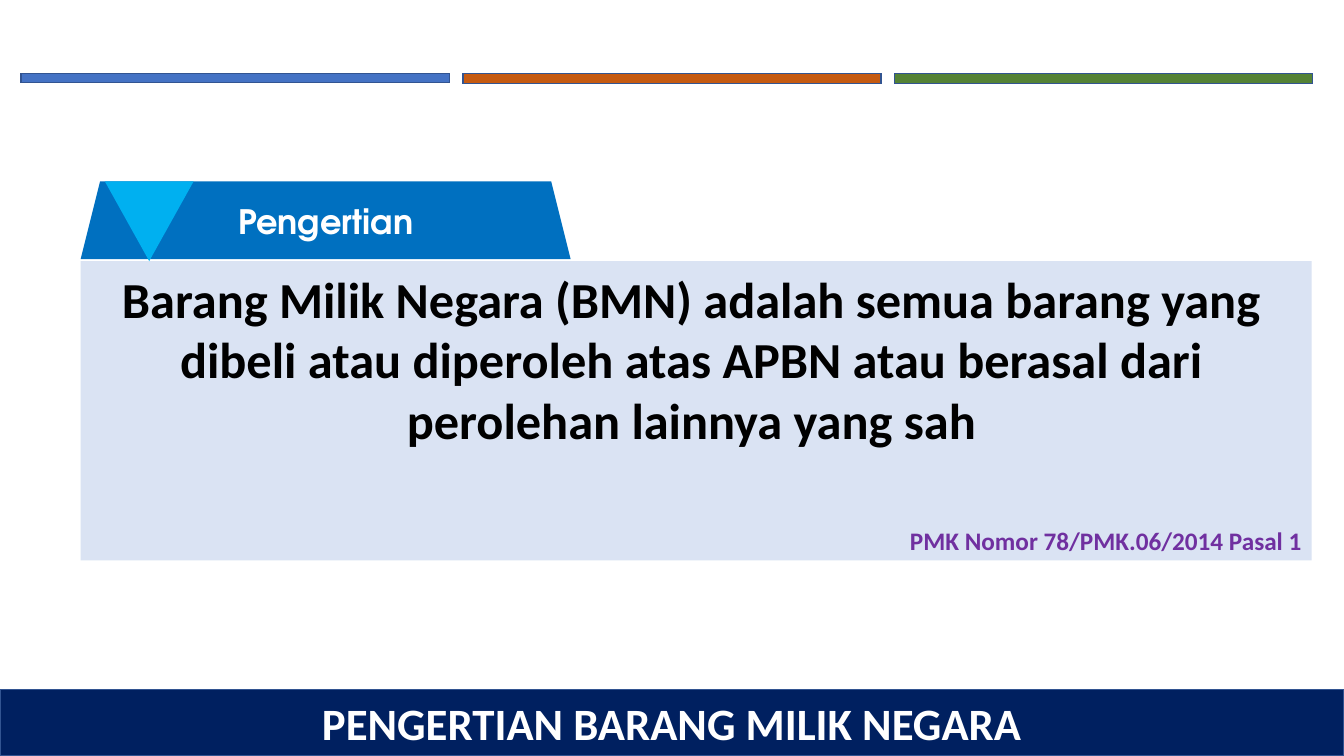
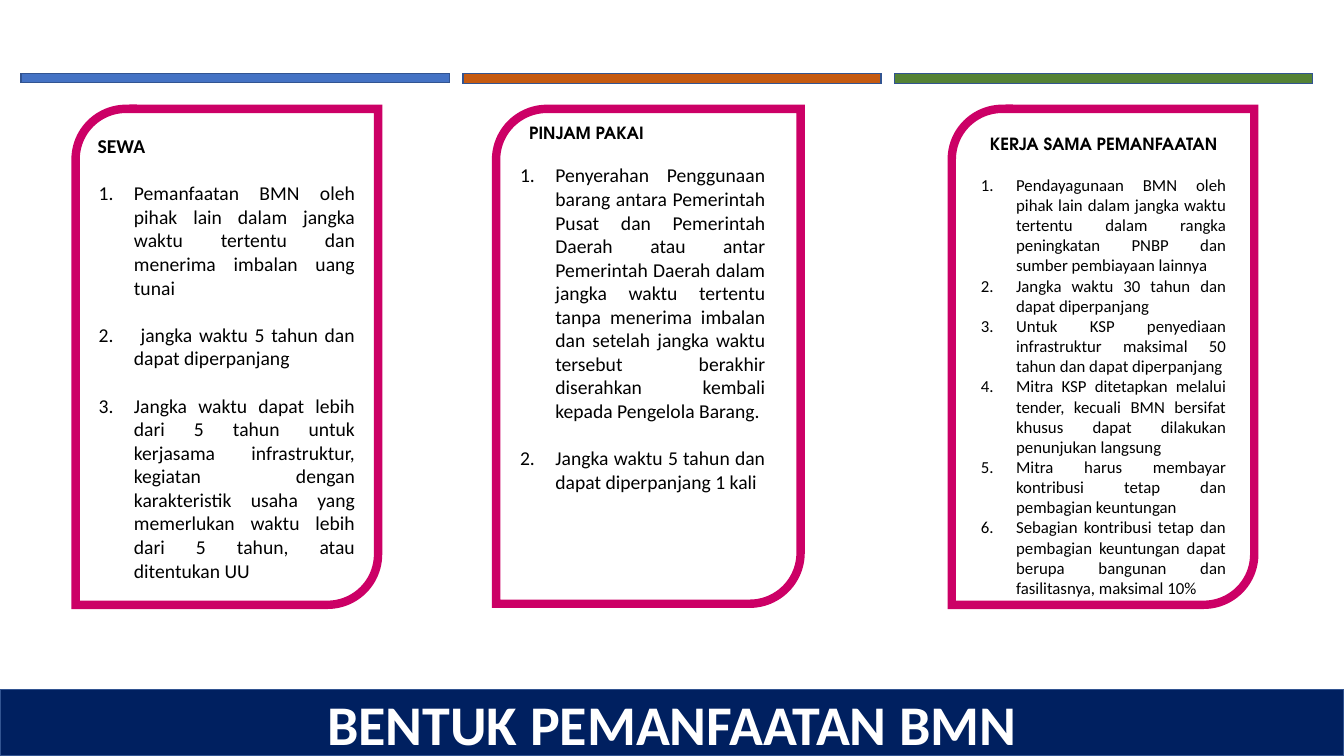
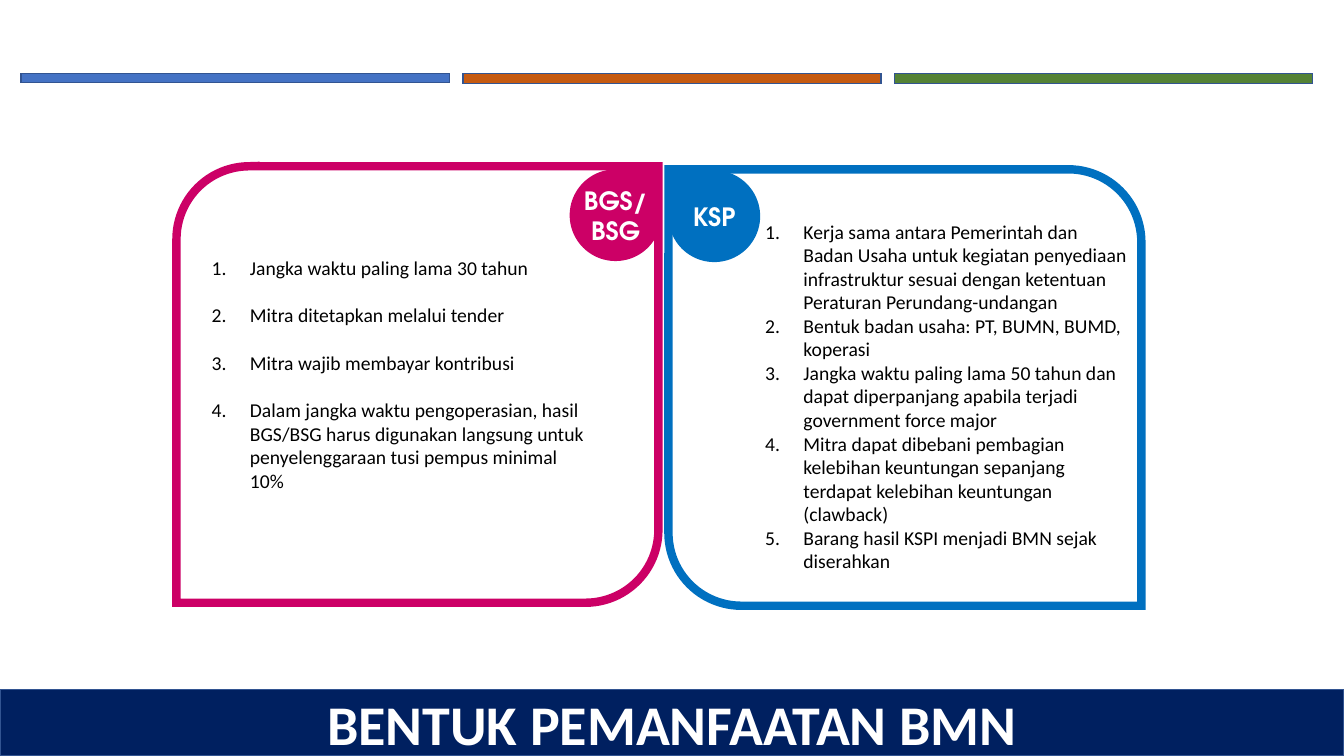
from pptx import Presentation, util as u
from pptx.dml.color import RGBColor
from pptx.enum import shapes, text
from pptx.oxml import ns, xmlchemy

HUES = {
    "navy": "002060", "edge": "325491", "blue": "4472C4", "rust": "C55A11",
    "green": "548235", "pale": "DAE3F3", "tab": "0070C0", "sky": "00B0F0",
    "pink": "CC0066", "plum": "7030A0", "black": "000000", "white": "FFFFFF",
}
BODY, HEAD = "Calibri", "TeX Gyre Adventor"
KIND, ALIGN = shapes.MSO_SHAPE, text.PP_ALIGN
WIDE, HIGH = 13.33, 7.5


def hue(name):
    return RGBColor.from_string(HUES[name])


def inches(box):
    return [u.Inches(v) for v in box]


def paint(shape, fill=None, line=None, width=1):
    if fill:
        shape.fill.solid()
        shape.fill.fore_color.rgb = hue(fill)
    else:
        shape.fill.background()
    if line:
        shape.line.color.rgb = hue(line)
        shape.line.width = u.Pt(width)
        # Square outer corners
        miter = xmlchemy.OxmlElement("a:miter")
        miter.set("lim", "800000")
        shape.line._get_or_add_ln().append(miter)
    else:
        shape.line.fill.background()


def draw(slide, kind, box, fill=None, line=None, width=1):
    shape = slide.shapes.add_shape(kind, *inches(box))
    shape.shadow.inherit = False
    paint(shape, fill, line, width)
    return shape


def write(para, words, size, color="black", bold=False, font=BODY, align=None):
    para.alignment = align
    run = para.add_run()
    run.text = words
    run.font.size, run.font.name, run.font.bold = u.Pt(size), font, bold
    run.font.color.rgb = hue(color)


def frame(slide, box):
    area = slide.shapes.add_textbox(*inches(box)).text_frame
    area.word_wrap = True
    return area


def label(shape, words, size):
    area = shape.text_frame
    area.word_wrap = True
    area.vertical_anchor = text.MSO_ANCHOR.MIDDLE
    write(area.paragraphs[0], words, size, "white", True, HEAD, ALIGN.CENTER)


def indent(para, left, first=0.0):
    props = para._p.get_or_add_pPr()
    props.set("marL", str(u.Inches(left)))
    props.set("indent", str(u.Inches(first)))
    return props


def items(area, lines, size=14, gap=0, left=0.36, align=None):
    """Numbered list, added after any heading in the frame."""
    for line in lines:
        first = area.paragraphs[0]
        para = area.add_paragraph() if first.runs else first
        write(para, line, size, align=align)
        para.space_after = u.Pt(gap)
        mark = xmlchemy.OxmlElement("a:buAutoNum")
        mark.set("type", "arabicPeriod")
        indent(para, left, 0.01 - left).append(mark)


def base(deck, title, size):
    """Slide with the three top bars and the title band."""
    slide = deck.slides.add_slide(deck.slide_layouts[5])
    left = 0.21
    for color, width, tall in (("blue", 4.25, 0.09), ("rust", 4.15, 0.1),
                               ("green", 4.15, 0.1)):
        draw(slide, KIND.RECTANGLE, (left, 0.73, width, tall), color, "edge")
        left += width + 0.13
    band = slide.shapes.title
    band.left, band.top, band.width, band.height = inches((0, 6.84, WIDE, 0.66))
    paint(band, "navy", "edge")
    area = band.text_frame
    area.auto_size = text.MSO_AUTO_SIZE.NONE
    area.vertical_anchor = text.MSO_ANCHOR.MIDDLE
    write(area.paragraphs[0], title, size, "white", True, align=ALIGN.CENTER)
    return slide


def card(slide, box, color="pink", flip=False):
    shape = draw(slide, KIND.ROUND_2_DIAG_RECTANGLE, box, None, color, 6)
    shape.adjustments[0], shape.adjustments[1] = (0, 0.167) if flip else (0.167, 0)


def panel(slide, box):
    """Definition panel with a tab on its top edge."""
    x, y, w, h = box
    draw(slide, KIND.RECTANGLE, box, "pale")
    area = frame(slide, (x - 0.09, y + 0.02, w + 0.09, h))
    write(area.paragraphs[0],
          "Barang Milik Negara (BMN) adalah semua barang yang dibeli atau "
          "diperoleh atas APBN atau berasal dari perolehan lainnya yang sah",
          36, bold=True, align=ALIGN.CENTER)
    source = area.add_paragraph()
    source.space_before = u.Pt(54)
    write(source, "PMK Nomor 78/PMK.06/2014 Pasal 1", 18, "plum", True,
          align=ALIGN.RIGHT)
    tab = draw(slide, KIND.TRAPEZOID, (x, y - 0.79, 4.86, 0.77), "tab")
    label(tab, "Pengertian", 24)
    draw(slide, KIND.FLOWCHART_MERGE, (x + 0.24, y - 0.79, 0.88, 0.79), "sky")


def form(slide, box, inset, head, lines, font, sizes, left, gaps):
    """Card with a heading and a justified list."""
    x, y, w, h = box
    dx, dy, wide = inset
    card(slide, box)
    area = frame(slide, (x + dx, y + dy, wide, h - dy))
    top = area.paragraphs[0]
    write(top, head, sizes[0], bold=True, font=font)
    indent(top, left)
    top.space_after = u.Pt(gaps[0])
    items(area, lines, sizes[1], gaps[1], align=ALIGN.JUSTIFY)


def badge(slide, box, words, color, flip=False):
    drop = draw(slide, KIND.TEAR, box, color)
    if flip:
        drop._element.spPr.find(ns.qn("a:xfrm")).set("flipH", "1")
    else:
        drop.text_frame.margin_left = drop.text_frame.margin_right = 0
    label(drop, words, 18)


FORMS = [
    ((0.75, 1.08, 3, 4.92), (0.12, 0.2, 2.75), "SEWA", [
        "Pemanfaatan BMN oleh pihak lain dalam jangka waktu tertentu dan "
        "menerima imbalan uang tunai",
        " jangka waktu 5 tahun dan dapat diperpanjang",
        "Jangka waktu dapat lebih dari 5 tahun untuk kerjasama infrastruktur, "
        "kegiatan dengan karakteristik usaha yang memerlukan waktu lebih dari "
        "5 tahun, atau ditentukan UU",
    ], BODY, (14, 14), 0, (17, 17)),
    ((4.92, 1.08, 3.02, 4.91), (0.13, 0.09, 2.64), "PINJAM PAKAI", [
        "Penyerahan Penggunaan barang antara Pemerintah Pusat dan Pemerintah "
        "Daerah atau antar Pemerintah Daerah dalam jangka waktu tertentu tanpa "
        "menerima imbalan dan setelah jangka waktu tersebut berakhir "
        "diserahkan kembali kepada Pengelola Barang.",
        "Jangka waktu 5 tahun dan dapat diperpanjang 1 kali",
    ], HEAD, (12, 14), 0.1, (14.5, 17)),
    ((9.44, 1.08, 3, 4.92), (0.18, 0.2, 2.64), "KERJA SAMA PEMANFAATAN", [
        "Pendayagunaan BMN oleh pihak lain dalam jangka waktu tertentu dalam "
        "rangka peningkatan PNBP dan sumber pembiayaan lainnya",
        "Jangka waktu 30 tahun dan dapat diperpanjang",
        "Untuk KSP penyediaan infrastruktur maksimal 50 tahun dan dapat "
        "diperpanjang",
        "Mitra KSP ditetapkan melalui tender, kecuali BMN bersifat khusus "
        "dapat dilakukan penunjukan langsung",
        "Mitra harus membayar kontribusi tetap dan pembagian keuntungan",
        "Sebagian kontribusi tetap dan pembagian keuntungan dapat berupa "
        "bangunan dan fasilitasnya, maksimal 10%",
    ], HEAD, (12, 12), 0.1, (14.5, 0)),
]

BUILD = [
    "Jangka waktu paling lama 30 tahun",
    "Mitra ditetapkan melalui tender",
    "Mitra wajib membayar kontribusi",
    "Dalam jangka waktu pengoperasian, hasil BGS/BSG harus digunakan langsung "
    "untuk penyelenggaraan tusi pempus minimal 10%",
]
JOINT = [
    "Kerja sama antara Pemerintah dan Badan Usaha untuk kegiatan penyediaan "
    "infrastruktur sesuai dengan ketentuan Peraturan Perundang-undangan",
    "Bentuk badan usaha: PT, BUMN, BUMD, koperasi",
    "Jangka waktu paling lama 50 tahun dan dapat diperpanjang apabila terjadi "
    "government force major",
    "Mitra dapat dibebani pembagian kelebihan keuntungan sepanjang terdapat "
    "kelebihan keuntungan (clawback)",
    "Barang hasil KSPI menjadi BMN sejak diserahkan",
]


def build(slide, box):
    """Left card, badge in its top right corner."""
    x, y, w, h = box
    card(slide, box)
    badge(slide, (x + w - 0.88, y + 0.03, 0.91, 0.91), "BGS/BSG", "pink")
    items(frame(slide, (x + 0.24, y + 0.84, 4.02, 2.46)), BUILD, gap=17, left=0.39)


def joint(slide, box):
    """Right card, badge in its top left corner."""
    x, y, w, h = box
    card(slide, box, "tab", True)
    badge(slide, (x, y + 0.01, 0.91, 0.91), "KSP", "tab", True)
    items(frame(slide, (x + 0.85, y + 0.45, 3.81, 3.64)), JOINT, left=0.39)


def main():
    deck = Presentation()
    deck.slide_width, deck.slide_height = inches((WIDE, HIGH))

    # Definition
    panel(base(deck, "PENGERTIAN BARANG MILIK NEGARA", 32), (0.8, 2.59, 12.21, 2.97))

    # Three forms of use
    title = "BENTUK PEMANFAATAN BMN"
    slide = base(deck, title, 40)
    for part in FORMS:
        form(slide, *part)

    # Two facing cards
    slide = base(deck, title, 40)
    build(slide, (1.75, 1.65, 4.78, 4.33))
    joint(slide, (6.63, 1.68, 4.69, 4.33))

    deck.save("out.pptx")


if __name__ == "__main__":
    main()
